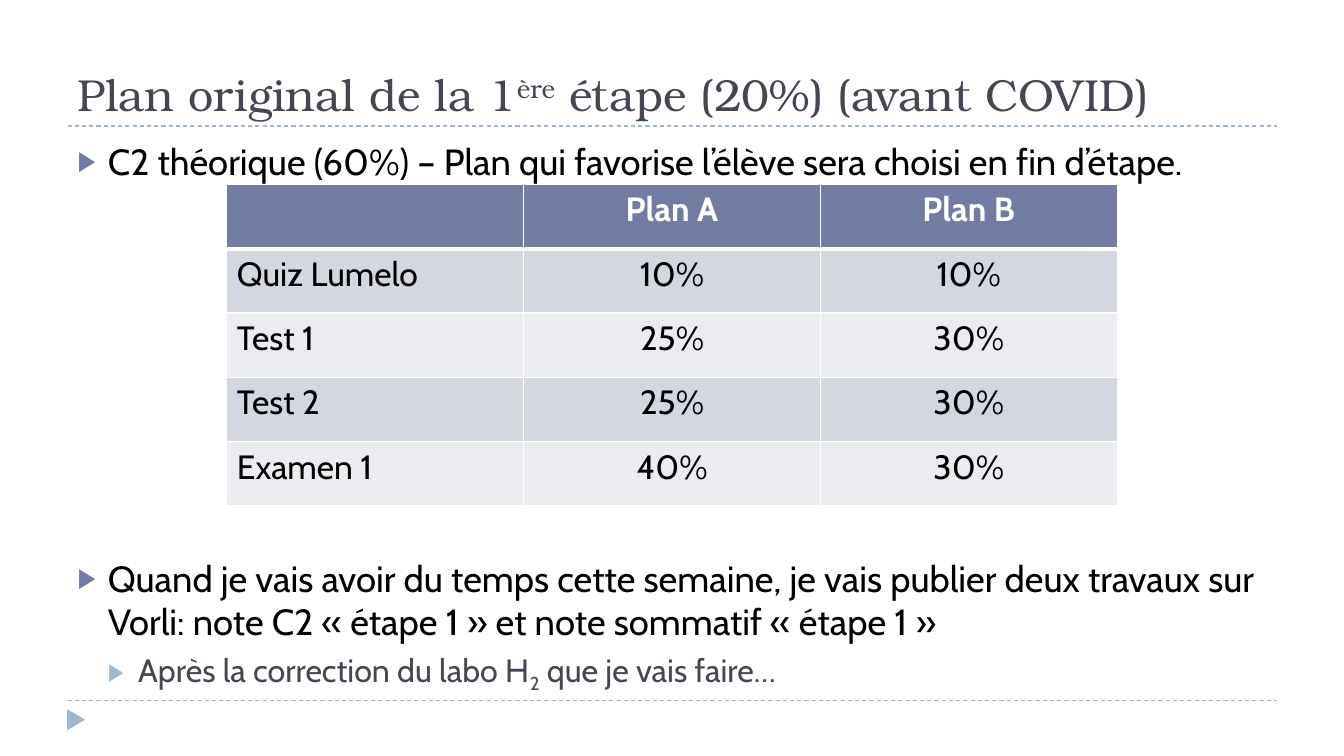
from dataclasses import dataclass

from lxml.etree import SubElement
from pptx import Presentation
from pptx.dml.color import RGBColor
from pptx.enum.dml import MSO_LINE
from pptx.enum.shapes import MSO_CONNECTOR, MSO_SHAPE
from pptx.enum.text import MSO_ANCHOR, MSO_AUTO_SIZE, PP_ALIGN
from pptx.oxml.ns import qn
from pptx.util import Inches, Pt


@dataclass(frozen=True)
class Theme:
    """Colours, fonts and type sizes of the slide."""
    heading_font: str = "TeX Gyre Bonum"
    body_font: str = "Cabin"
    ink: str = "000000"
    slate: str = "464653"
    accent: str = "727CA3"
    pale_blue: str = "9FB8CD"
    white: str = "FFFFFF"
    bands: tuple = ("D5D7E0", "EBECF0")
    title_size: int = 32
    body_size: int = 26
    detail_size: int = 23
    table_size: int = 24


THEME = Theme()

GRADES = [
    ("", "Plan A", "Plan B"),
    ("Quiz Lumelo", "10%", "10%"),
    ("Test 1", "25%", "30%"),
    ("Test 2", "25%", "30%"),
    ("Examen 1", "40%", "30%"),
]


def set_values(target, values):
    """Set every attribute named in a dict of format values."""
    for name, value in values.items():
        setattr(target, name, value)


def place(shape, box):
    """Move a shape to a box given in inches."""
    names = ("left", "top", "width", "height")
    set_values(shape, dict(zip(names, map(Inches, box))))


def add_spans(para, spans, font, size, color, bold=False):
    """Add (text, baseline percent) spans in one type style."""
    for text, baseline in spans:
        span = para.add_run()
        span.text = text
        set_values(span.font, {"name": font, "size": Pt(size), "bold": bold})
        span.font.color.rgb = RGBColor.from_string(color)
        if baseline:
            span.font._element.set("baseline", str(baseline * 1000))


def add_bullet(para, indent, color):
    """Give a paragraph a coloured triangle bullet with a hanging indent."""
    properties = para._p.get_or_add_pPr()
    properties.set("marL", str(Inches(indent)))
    properties.set("indent", str(Inches(-0.3)))
    bullet_color = SubElement(properties, qn("a:buClr"))
    SubElement(bullet_color, qn("a:srgbClr"), val=color)
    SubElement(properties, qn("a:buSzPct"), val="76000")
    SubElement(properties, qn("a:buChar"), char="▶")


def add_frame(page, box):
    """Draw the dashed rules and the footer triangle in the given box."""
    left, top, width, height = box
    for y in (top, top + height):
        rule = page.shapes.add_connector(
            MSO_CONNECTOR.STRAIGHT,
            Inches(left), Inches(y), Inches(left + width), Inches(y))
        set_values(rule.line, {"width": Pt(0.75), "dash_style": MSO_LINE.DASH})
        rule.line.color.rgb = RGBColor.from_string(THEME.pale_blue)
        SubElement(rule._element.spPr, qn("a:effectLst"))
    marker = page.shapes.add_shape(
        MSO_SHAPE.ISOSCELES_TRIANGLE, Inches(left - 0.02),
        Inches(top + height + 0.1), Inches(0.21), Inches(0.18))
    marker.rotation = 90
    marker.shadow.inherit = False
    marker.fill.solid()
    marker.fill.fore_color.rgb = RGBColor.from_string(THEME.pale_blue)
    marker.line.fill.background()


def fill_title(page, box):
    """Write the heading in the title placeholder."""
    title = page.shapes.title
    place(title, box)
    set_values(title.text_frame, {
        "vertical_anchor": MSO_ANCHOR.BOTTOM,
        "auto_size": MSO_AUTO_SIZE.NONE, "word_wrap": True})
    para = title.text_frame.paragraphs[0]
    para.alignment = PP_ALIGN.LEFT
    spans = [("Plan original de la 1", 0), ("ère", 30),
             (" étape (20%) (avant COVID)", 0)]
    add_spans(para, spans, THEME.heading_font, THEME.title_size, THEME.slate)


def fill_body(page, box):
    """Write the bullets, leaving room for the table after the first one."""
    body = page.placeholders[1]
    place(body, box)
    frame = body.text_frame
    set_values(frame, {"vertical_anchor": MSO_ANCHOR.TOP,
                       "auto_size": MSO_AUTO_SIZE.NONE, "word_wrap": True})
    main = (0, THEME.body_size, THEME.ink, THEME.accent)
    detail = (1, THEME.detail_size, THEME.slate, THEME.pale_blue)
    bullets = [
        (main, 6, [("C2 théorique (60%) – Plan qui favorise l’élève sera "
                    "choisi en fin d’étape.", 0)]),
        (main, 266.5, [("Quand je vais avoir du temps cette semaine, je vais "
                        "publier deux travaux sur Vorli: note C2 "
                        "« étape 1 » et note sommatif « étape 1 »", 0)]),
        (detail, 5, [("Après la correction du labo H", 0), ("2", -25),
                     (" que je vais faire…", 0)]),
    ]
    for index, (style, gap, spans) in enumerate(bullets):
        level, size, color, bullet_color = style
        para = frame.add_paragraph() if index else frame.paragraphs[0]
        set_values(para, {"level": level, "space_before": Pt(gap),
                          "alignment": PP_ALIGN.LEFT})
        add_bullet(para, 0.3 * (level + 1), bullet_color)
        add_spans(para, spans, THEME.body_font, size, color)


def add_borders(cell, widths):
    """Draw white cell borders from a dict of side to width in points."""
    properties = cell._tc.get_or_add_tcPr()
    for side, width in widths.items():
        line = SubElement(properties, qn(f"a:ln{side}"), w=str(Pt(width)))
        fill = SubElement(line, qn("a:solidFill"))
        SubElement(fill, qn("a:srgbClr"), val=THEME.white)


def add_grades(page, box):
    """Build the table that compares both marking plans."""
    rows, columns = len(GRADES), len(GRADES[0])
    table = page.shapes.add_table(rows, columns, *map(Inches, box)).table
    table.horz_banding = False
    for row, values in enumerate(GRADES):
        header = row == 0
        fill = THEME.accent if header else THEME.bands[(row - 1) % 2]
        color = THEME.white if header else THEME.ink
        borders = {"L": 1, "R": 1, "T": 3 if row == 1 else 1,
                   "B": 3 if header else 1}
        for column, value in enumerate(values):
            cell = table.cell(row, column)
            add_borders(cell, borders)
            cell.fill.solid()
            cell.fill.fore_color.rgb = RGBColor.from_string(fill)
            if value:
                para = cell.text_frame.paragraphs[0]
                para.alignment = PP_ALIGN.CENTER if column else PP_ALIGN.LEFT
                add_spans(para, [(value, 0)], THEME.body_font,
                          THEME.table_size, color, header)


def main():
    """Build the marking plan slide and save it."""
    deck = Presentation()
    set_values(deck, {"slide_width": Inches(13.33),
                      "slide_height": Inches(7.5)})
    page = deck.slides.add_slide(deck.slide_layouts[1])
    add_frame(page, (0.67, 1.25, 12, 5.7))
    fill_title(page, (0.67, 0.17, 12, 1.08))
    fill_body(page, (0.67, 1.33, 12, 5.4))
    add_grades(page, (2.25, 1.83, 8.83, 3.19))
    deck.save("out.pptx")


if __name__ == "__main__":
    main()
